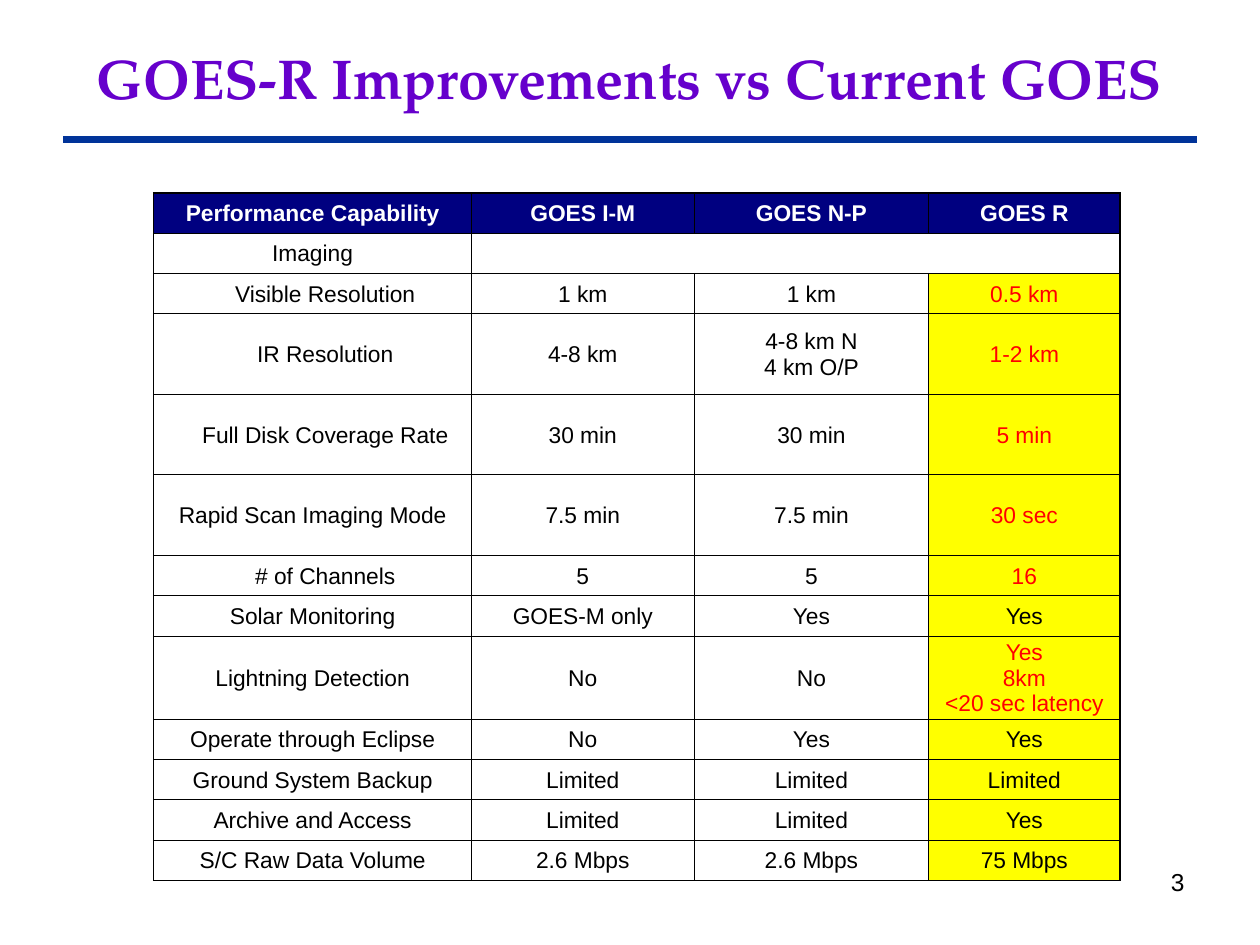
from lxml.etree import SubElement
from pptx import Presentation
from pptx.dml.color import RGBColor
from pptx.enum.shapes import MSO_CONNECTOR
from pptx.enum.text import MSO_ANCHOR, PP_ALIGN
from pptx.oxml.ns import qn
from pptx.util import Inches, Pt


def color(value):
    return RGBColor.from_string(value)


def style_text(frame, size, ink, align=PP_ALIGN.CENTER, font="Arial", bold=False):
    frame.word_wrap = True
    for paragraph in frame.paragraphs:
        paragraph.alignment = align
        for run in paragraph.runs:
            run.font.name = font
            run.font.size = Pt(size)
            run.font.bold = bold
            run.font.color.rgb = color(ink)


prs = Presentation()
prs.slide_width, prs.slide_height = Inches(10), Inches(7.5)
slide = prs.slides.add_slide(prs.slide_layouts[6])

title = slide.shapes.add_textbox(Inches(0.56), Inches(0.3), Inches(8.88), Inches(0.62)).text_frame
title.text = "GOES-R Improvements vs Current GOES"
title.vertical_anchor = MSO_ANCHOR.MIDDLE
style_text(title, 32, "6600CC", font="TeX Gyre Pagella", bold=True)

page_number = slide.shapes.add_textbox(Inches(7.17), Inches(6.83), Inches(2.33), Inches(0.52)).text_frame
page_number.text = "3"
style_text(page_number, 14, "000000", PP_ALIGN.RIGHT)

capabilities = [
    ("Performance Capability", "GOES I-M", "GOES N-P", "GOES R"),
    ("Imaging", "", "", ""),
    ("Visible Resolution", "1 km", "1 km", "0.5 km"),
    ("IR Resolution", "4-8 km", "4-8 km N\n4 km O/P", "1-2 km"),
    ("Full Disk Coverage Rate", "30 min", "30 min", "5 min"),
    ("Rapid Scan Imaging Mode", "7.5 min", "7.5 min", "30 sec"),
    ("# of Channels", "5", "5", "16"),
    ("Solar Monitoring", "GOES-M only", "Yes", "Yes"),
    ("Lightning Detection", "No", "No", "Yes\n8km\n<20 sec latency"),
    ("Operate through Eclipse", "No", "Yes", "Yes"),
    ("Ground System Backup", "Limited", "Limited", "Limited"),
    ("Archive and Access", "Limited", "Limited", "Yes"),
    ("S/C Raw Data Volume", "2.6 Mbps", "2.6 Mbps", "75 Mbps"),
]
column_widths = [2.52, 1.77, 1.86, 1.52]
row_heights = [0.32] * 3 + [0.64] * 3 + [0.32] * 2 + [0.62] + [0.32] * 4
imaging_row = 1
indented_rows = {2, 3, 4, 6}
improved_rows = {2, 3, 4, 5, 6, 8}
last_column = len(column_widths) - 1

table = slide.shapes.add_table(
    len(capabilities), len(column_widths), Inches(1.22), Inches(1.53),
    Inches(sum(column_widths)), Inches(sum(row_heights))).table
table.first_row = table.horz_banding = False
for column, width in zip(table.columns, column_widths):
    column.width = Inches(width)
for row, height in zip(table.rows, row_heights):
    row.height = Inches(height)

for r, values in enumerate(capabilities):
    for c, value in enumerate(values):
        cell = table.cell(r, c)
        cell.text = value
        cell.vertical_anchor = MSO_ANCHOR.MIDDLE
        cell.margin_left = Inches(0.21 if c == 0 and r in indented_rows else 0.01)
        cell.margin_right = cell.margin_top = Inches(0.01)
        cell.margin_bottom = 0

        borders = {
            "a:lnL": 1 if c == 0 else 0.5,
            "a:lnR": 1 if c == last_column else 0.5,
            "a:lnT": 1 if r == 0 else 0.5,
            "a:lnB": 0.5,
        }
        if r == imaging_row and c > 1:
            borders["a:lnL"] = 0
        if r == imaging_row and 0 < c < last_column:
            borders["a:lnR"] = 0
        for side, weight in borders.items():
            border = SubElement(cell._tc.get_or_add_tcPr(), qn(side), w=str(Pt(weight)))
            if weight:
                ink = SubElement(border, qn("a:solidFill"))
                SubElement(ink, qn("a:srgbClr"), val="000000")
            else:
                SubElement(border, qn("a:noFill"))

        highlighted = c == last_column and r > imaging_row
        fill = "000080" if r == 0 else "FFFF00" if highlighted else "FFFFFF"
        cell.fill.solid()
        cell.fill.fore_color.rgb = color(fill)
        ink = "FFFFFF" if r == 0 else "FF0000" if highlighted and r in improved_rows else "000000"
        style_text(cell.text_frame, 13, ink, bold=r == 0)

title_rule = slide.shapes.add_connector(
    MSO_CONNECTOR.STRAIGHT, Inches(0.5), Inches(1.11), Inches(9.5), Inches(1.11))
title_rule.line.color.rgb = color("003399")
title_rule.line.width = Pt(4)
SubElement(title_rule._element.spPr, qn("a:effectLst"))

prs.save("out.pptx")
